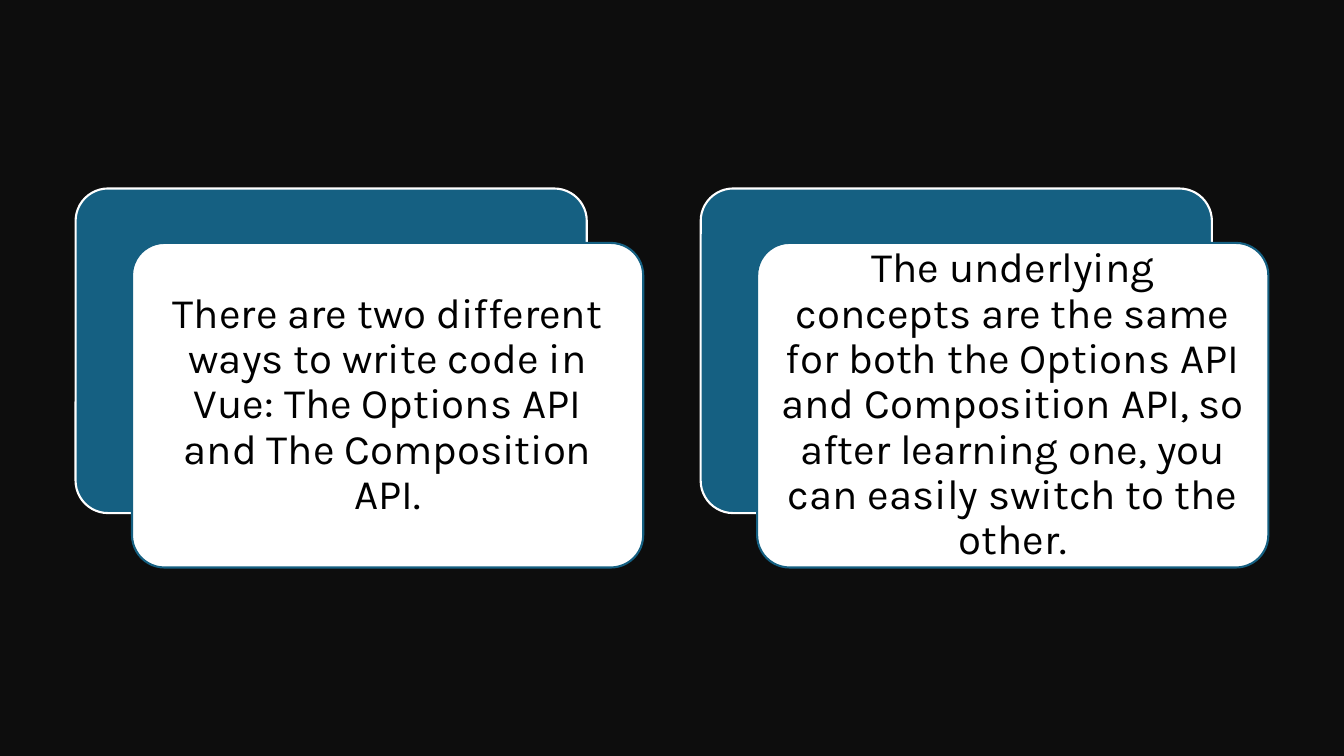
from pptx import Presentation
from pptx.dml.color import RGBColor
from pptx.enum import shapes, text
from pptx.util import Inches, Pt

COLORS = {"background": "0D0D0D", "blue": "156082", "white": "FFFFFF", "black": "000000"}
CARD_W, CARD_H = 5.07, 3.22
LEFT, TOP, COLUMN_STEP = 0.75, 1.87, 6.2
OFFSET_X, OFFSET_Y = 0.56, 0.54  # front card relative to the back card
INSET = 0.095  # text box inside the front card
STATEMENTS = [
    "There are two different ways to write code in Vue: "
    "The Options API and The Composition API.",
    "The underlying concepts are the same for both the Options API and "
    "Composition API, so after learning one, you can easily switch to the other.",
]


def rgb(name):
    return RGBColor.from_string(COLORS[name])


def add_card(s, x, y, fill, line):
    sp = s.shapes.add_shape(shapes.MSO_SHAPE.ROUNDED_RECTANGLE,
                            Inches(x), Inches(y), Inches(CARD_W), Inches(CARD_H))
    sp.adjustments[0] = 0.1
    sp.shadow.inherit = False
    sp.fill.solid()
    sp.fill.fore_color.rgb = rgb(fill)
    sp.line.color.rgb = rgb(line)
    sp.line.width = Pt(1.5)


def add_text(s, content, x, y, w, h, *, size=30, font="Karla", color="black",
             margin=0.12, spacing=0.9):
    tf = s.shapes.add_textbox(Inches(x), Inches(y), Inches(w), Inches(h)).text_frame
    tf.word_wrap = True
    tf.vertical_anchor = text.MSO_ANCHOR.MIDDLE
    tf.margin_left = tf.margin_right = tf.margin_top = tf.margin_bottom = Inches(margin)
    p = tf.paragraphs[0]
    p.alignment = text.PP_ALIGN.CENTER
    p.line_spacing = spacing
    r = p.add_run()
    r.text = content
    r.font.size = Pt(size)
    r.font.name = font
    r.font.color.rgb = rgb(color)


def add_statement(s, x, y, content):
    # Blue card behind, white card in front
    add_card(s, x, y, "blue", "white")
    front_x, front_y = x + OFFSET_X, y + OFFSET_Y
    add_card(s, front_x, front_y, "white", "blue")
    add_text(s, content, front_x + INSET, front_y + INSET,
             CARD_W - 2 * INSET, CARD_H - 2 * INSET)


def main():
    prs = Presentation()
    prs.slide_width, prs.slide_height = Inches(13.33), Inches(7.5)
    s = prs.slides.add_slide(prs.slide_layouts[6])

    # Dark background
    s.background.fill.solid()
    s.background.fill.fore_color.rgb = rgb("background")

    # One statement per column
    for column, content in enumerate(STATEMENTS):
        add_statement(s, LEFT + column * COLUMN_STEP, TOP, content)

    prs.save("out.pptx")


if __name__ == "__main__":
    main()
